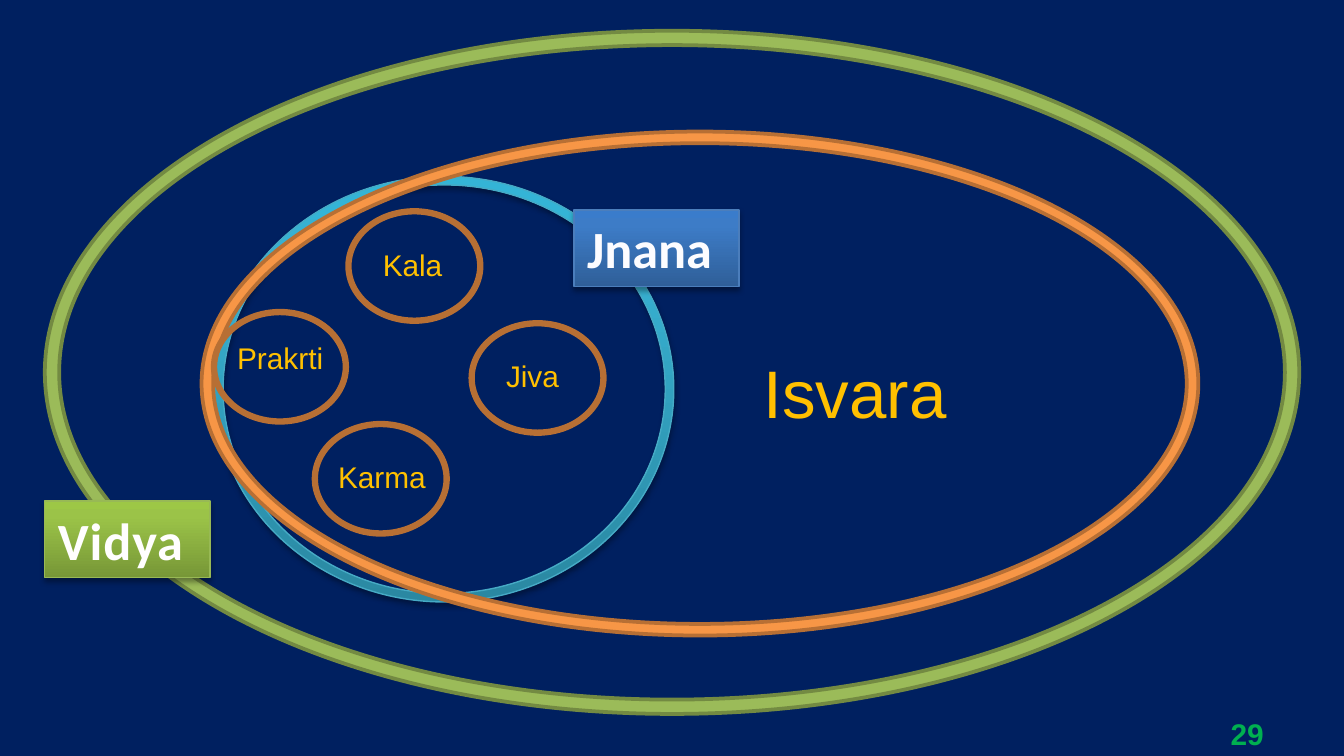
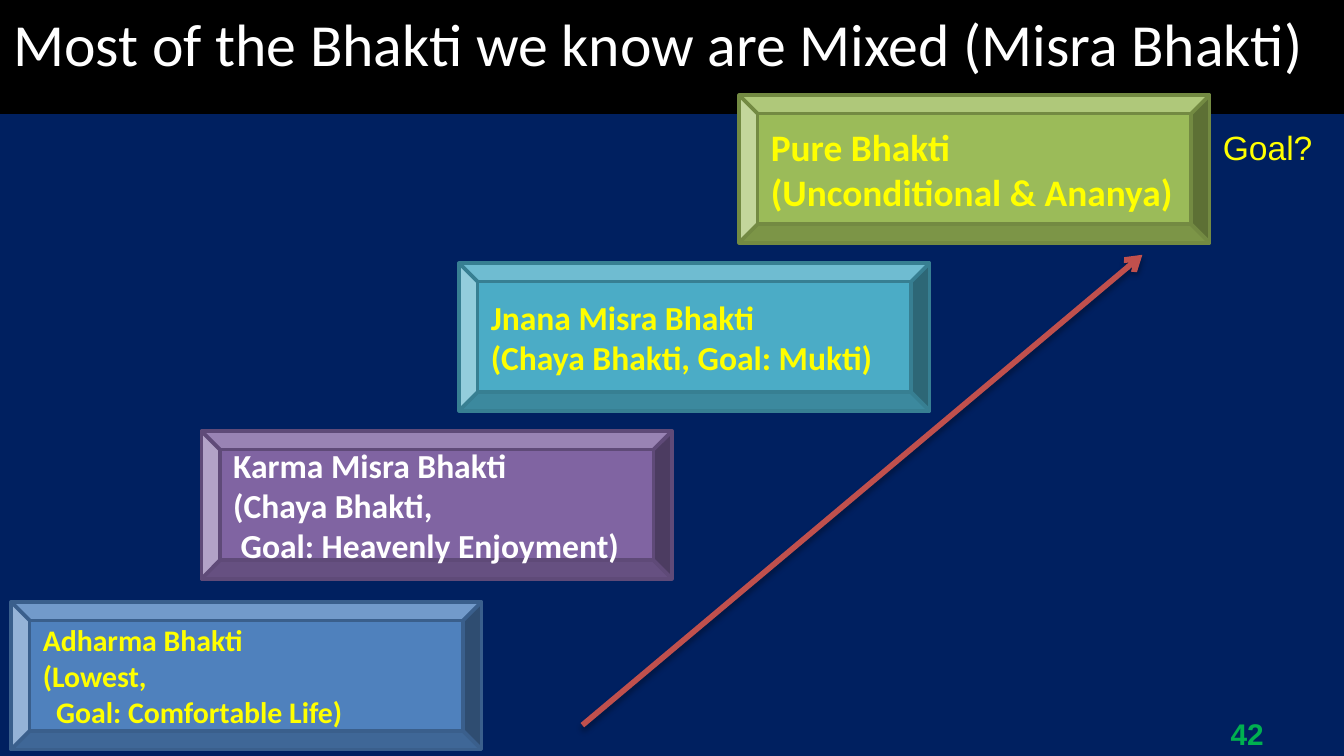
"""Build two slides: nested circles of knowledge and the steps of Bhakti."""
from dataclasses import dataclass
from typing import Any, Optional

from pptx import Presentation
from pptx.dml.color import RGBColor
from pptx.enum.shapes import MSO_CONNECTOR as Connector, MSO_SHAPE as Preset
from pptx.enum.text import MSO_ANCHOR as Anchor, MSO_AUTO_SIZE as Fit, PP_ALIGN as Align
from pptx.oxml import parse_xml
from pptx.oxml.ns import nsdecls
from pptx.util import Pt

Box = tuple[float, float, float, float]
Gradient = tuple[tuple[int, str], ...]


@dataclass(frozen=True)
class Theme:
    navy: str = "002060"
    black: str = "000000"
    white: str = "FFFFFF"
    yellow: str = "FFFF00"
    amber: str = "FFC000"
    page_green: str = "00B050"
    green: str = "9BBB59"
    green_edge: str = "738A42"
    orange: str = "F79646"
    orange_edge: str = "B76F34"
    purple: str = "8064A2"
    purple_edge: str = "5F4A78"
    teal: str = "4BACC6"
    teal_edge: str = "377F92"
    blue: str = "4F81BD"
    blue_edge: str = "3A5F8C"
    red: str = "C0504D"
    glossy_teal: Gradient = ((0, "2A88A2"), (80, "37B1D2"), (100, "34B4D6"))
    glossy_teal_edge: str = "46AAC5"
    glossy_blue: Gradient = ((0, "2F5F99"), (80, "3D7CC7"), (100, "3A7CCB"))
    glossy_blue_edge: str = "4B7EBC"
    glossy_green: Gradient = ((0, "779737"), (80, "9BC348"), (100, "9DC746"))
    glossy_green_edge: str = "98B955"
    jnana_text: str = "FCFCFF"
    jnana_outline: str = "1E7CEE"
    vidya_text: str = "FFFEFE"
    vidya_outline: str = "E78738"
    sans: str = "Arial"
    heading: str = "Calibri"
    small: int = 16
    medium: int = 18
    large: int = 20
    tag: int = 28
    title: int = 32
    huge: int = 36


THEME = Theme()


@dataclass(frozen=True)
class TextStyle:
    size: int
    color: str
    font: str = THEME.sans
    bold: bool = False
    align: Any = Align.LEFT


@dataclass(frozen=True)
class Ring:
    box: Box
    ratio: float
    fill: str | Gradient
    edge: str
    width: float = 2
    shadow: bool = False


@dataclass(frozen=True)
class Label:
    text: str
    box: Box
    style: TextStyle


@dataclass(frozen=True)
class Tag:
    label: Label
    fill: Gradient
    edge: str
    outline: str
    outline_width: float
    alpha: int = 100
    spacing: int = 0


@dataclass(frozen=True)
class Step:
    left: float
    top: float
    fill: str
    edge: str
    lines: tuple[str, ...]
    size: int
    color: str = THEME.yellow
    last_indent: float = 0


PAGE_STYLE = TextStyle(THEME.small, THEME.page_green, bold=True, align=Align.RIGHT)
TOPIC_STYLE = TextStyle(THEME.small, THEME.amber)
TITLE_STYLE = TextStyle(THEME.title, THEME.white, THEME.heading)
STEP_SIZE = (252, 79)
TOPIC_SIZE = (72, 60)
TOPIC_POSITIONS = ((114, 166.5), (186, 112.5), (168, 226.5), (252, 172.5))

RINGS = [
    Ring((24, 16.5, 672, 366), 0.021, THEME.green, THEME.green_edge),
    Ring((115, 94.5, 246, 228), 0.02, THEME.glossy_teal, THEME.glossy_teal_edge, 0.75, True),
    Ring((108, 70.5, 534, 270), 0.023, THEME.orange, THEME.orange_edge),
    *(Ring((*position, *TOPIC_SIZE), 0.023, THEME.orange, THEME.orange_edge)
      for position in TOPIC_POSITIONS),
]
TOPICS = [
    Label("Prakrti", (120, 178.5, 61, 26.6), TOPIC_STYLE),
    Label("Kala", (198, 128.5, 46.5, 26.6), TOPIC_STYLE),
    Label("Jiva", (264, 188, 43, 26.6), TOPIC_STYLE),
    Label("Karma", (174, 242, 62, 26.6), TOPIC_STYLE),
    Label("Isvara", (402, 184.5, 114, 51), TextStyle(THEME.huge, THEME.amber)),
]
TAGS = [
    Tag(Label("Jnana", (307.5, 112.5, 88.5, 41),
              TextStyle(THEME.tag, THEME.jnana_text, THEME.heading, True)),
        THEME.glossy_blue, THEME.glossy_blue_edge, THEME.jnana_outline, 0.07, 55),
    Tag(Label("Vidya", (24, 268.5, 88.5, 41),
              TextStyle(THEME.tag, THEME.vidya_text, THEME.heading, True)),
        THEME.glossy_green, THEME.glossy_green_edge, THEME.vidya_outline, 1, spacing=50),
]
STEPS = [
    Step(6, 322.5, THEME.blue, THEME.blue_edge,
         ("Adharma Bhakti", "(Lowest,", "Goal: Comfortable Life)"),
         THEME.small, last_indent=7.2),
    Step(108, 231, THEME.purple, THEME.purple_edge,
         ("Karma Misra Bhakti", "(Chaya Bhakti,", "Goal: Heavenly Enjoyment)"),
         THEME.medium, THEME.white, 4),
    Step(246, 141, THEME.teal, THEME.teal_edge,
         ("Jnana Misra Bhakti", "(Chaya Bhakti, Goal: Mukti)"), THEME.medium),
    Step(396, 51, THEME.green, THEME.green_edge,
         ("Pure Bhakti", "(Unconditional & Ananya)"), THEME.large),
]


def points(values: tuple[float, ...]) -> list[Pt]:
    return [Pt(value) for value in values]


def set_values(target: Any, values: dict[str, Any]) -> None:
    for name, value in values.items():
        setattr(target, name, value)


def write(shape: Any, lines: tuple[str, ...], style: TextStyle, frame_format: dict[str, Any]) -> None:
    frame = shape.text_frame
    frame.text = "\n".join(lines)
    set_values(frame, frame_format)
    for paragraph in frame.paragraphs:
        paragraph.alignment = style.align
        font = paragraph.runs[0].font
        set_values(font, {"size": Pt(style.size), "name": style.font, "bold": style.bold})
        font.color.rgb = RGBColor.from_string(style.color)


def paint(shape: Any, fill: str | Gradient, edge: str, width: float) -> None:
    shape.shadow.inherit = False
    if isinstance(fill, str):
        shape.fill.solid()
        shape.fill.fore_color.rgb = RGBColor.from_string(fill)
    else:
        stops = "".join(f'<a:gs pos="{place * 1000}"><a:srgbClr val="{color}"/></a:gs>'
                        for place, color in fill)
        shape._element.spPr.find("{*}prstGeom").addnext(parse_xml(
            f'<a:gradFill {nsdecls("a")} rotWithShape="1"><a:gsLst>{stops}</a:gsLst>'
            '<a:lin ang="16200000" scaled="0"/></a:gradFill>'))
    shape.line.color.rgb = RGBColor.from_string(edge)
    shape.line.width = Pt(width)


def cast_shadow(shape: Any) -> None:
    properties = shape._element.spPr
    for effects in properties.findall("{*}effectLst"):
        properties.remove(effects)
    properties.append(parse_xml(
        f'<a:effectLst {nsdecls("a")}><a:outerShdw blurRad="{Pt(3.1)}" dist="{Pt(1.8)}" '
        f'dir="5400000" rotWithShape="0"><a:srgbClr val="{THEME.black}">'
        '<a:alpha val="35000"/></a:srgbClr></a:outerShdw></a:effectLst>'))


def add_label(slide: Any, label: Label, frame_format: Optional[dict[str, Any]] = None) -> None:
    shape = slide.shapes.add_textbox(*points(label.box))
    write(shape, (label.text,), label.style,
          frame_format or {"word_wrap": False, "auto_size": Fit.SHAPE_TO_FIT_TEXT})


def add_page_number(slide: Any, number: str) -> None:
    add_label(slide, Label(number, (516, 386, 168, 14.5), PAGE_STYLE),
              {"word_wrap": True, "vertical_anchor": Anchor.MIDDLE})


def add_ring(slide: Any, ring: Ring) -> None:
    shape = slide.shapes.add_shape(Preset.DONUT, *points(ring.box))
    shape.adjustments[0] = ring.ratio
    paint(shape, ring.fill, ring.edge, ring.width)
    if ring.shadow:
        cast_shadow(shape)


def add_tag(slide: Any, tag: Tag) -> None:
    shape = slide.shapes.add_shape(Preset.RECTANGLE, *points(tag.label.box))
    paint(shape, tag.fill, tag.edge, 0.75)
    cast_shadow(shape)
    write(shape, (tag.label.text,), tag.label.style,
          {"word_wrap": True, "auto_size": Fit.SHAPE_TO_FIT_TEXT, "vertical_anchor": Anchor.TOP})
    properties = shape.text_frame.paragraphs[0].runs[0]._r.get_or_add_rPr()
    properties.set("spc", str(tag.spacing))
    properties.insert(0, parse_xml(
        f'<a:ln {nsdecls("a")} w="{Pt(tag.outline_width)}"><a:solidFill>'
        f'<a:srgbClr val="{tag.outline}"><a:alpha val="{tag.alpha * 1000}"/></a:srgbClr>'
        '</a:solidFill><a:prstDash val="solid"/></a:ln>'))


def add_step(slide: Any, step: Step) -> None:
    shape = slide.shapes.add_shape(Preset.BEVEL, *points((step.left, step.top, *STEP_SIZE)))
    paint(shape, step.fill, step.edge, 2)
    write(shape, step.lines, TextStyle(step.size, step.color, THEME.heading, True),
          {"word_wrap": True, "vertical_anchor": Anchor.MIDDLE})
    if step.last_indent:
        properties = shape.text_frame.paragraphs[-1]._p.get_or_add_pPr()
        properties.set("marL", str(Pt(step.last_indent)))
        properties.set("indent", "0")


def add_title(slide: Any, text: str) -> None:
    title = slide.shapes.title
    set_values(title, dict(zip(("left", "top", "width", "height"), points((0, 0, 720, 46)))))
    paint(title, THEME.black, THEME.black, 2)
    write(title, (text,), TITLE_STYLE,
          {"word_wrap": True, "auto_size": Fit.SHAPE_TO_FIT_TEXT, "vertical_anchor": Anchor.TOP})


def add_ascent_arrow(slide: Any) -> None:
    arrow = slide.shapes.add_connector(Connector.STRAIGHT, *points((312, 388.5, 612, 136.5)))
    arrow.line.color.rgb = RGBColor.from_string(THEME.red)
    arrow.line.width = Pt(3)
    arrow.line._get_or_add_ln().append(parse_xml(f'<a:tailEnd {nsdecls("a")} type="arrow"/>'))
    cast_shadow(arrow)


def build_circles(presentation: Any) -> None:
    slide = presentation.slides.add_slide(presentation.slide_layouts[6])
    add_page_number(slide, "29")
    for ring in RINGS:
        add_ring(slide, ring)
    for topic in TOPICS:
        add_label(slide, topic)
    for tag in TAGS:
        add_tag(slide, tag)


def build_steps(presentation: Any) -> None:
    slide = presentation.slides.add_slide(presentation.slide_layouts[5])
    add_page_number(slide, "42")
    add_title(slide, "Most of the Bhakti we know are Mixed (Misra Bhakti)")
    add_ascent_arrow(slide)
    for step in STEPS:
        add_step(slide, step)
    add_label(slide, Label("Goal?", (648, 64.5, 63, 29), TextStyle(THEME.medium, THEME.yellow)))


def main() -> None:
    presentation = Presentation()
    set_values(presentation, {"slide_width": Pt(720), "slide_height": Pt(405)})
    background = presentation.slide_master.background.fill
    background.solid()
    background.fore_color.rgb = RGBColor.from_string(THEME.navy)
    build_circles(presentation)
    build_steps(presentation)
    presentation.save("out.pptx")


if __name__ == "__main__":
    main()
